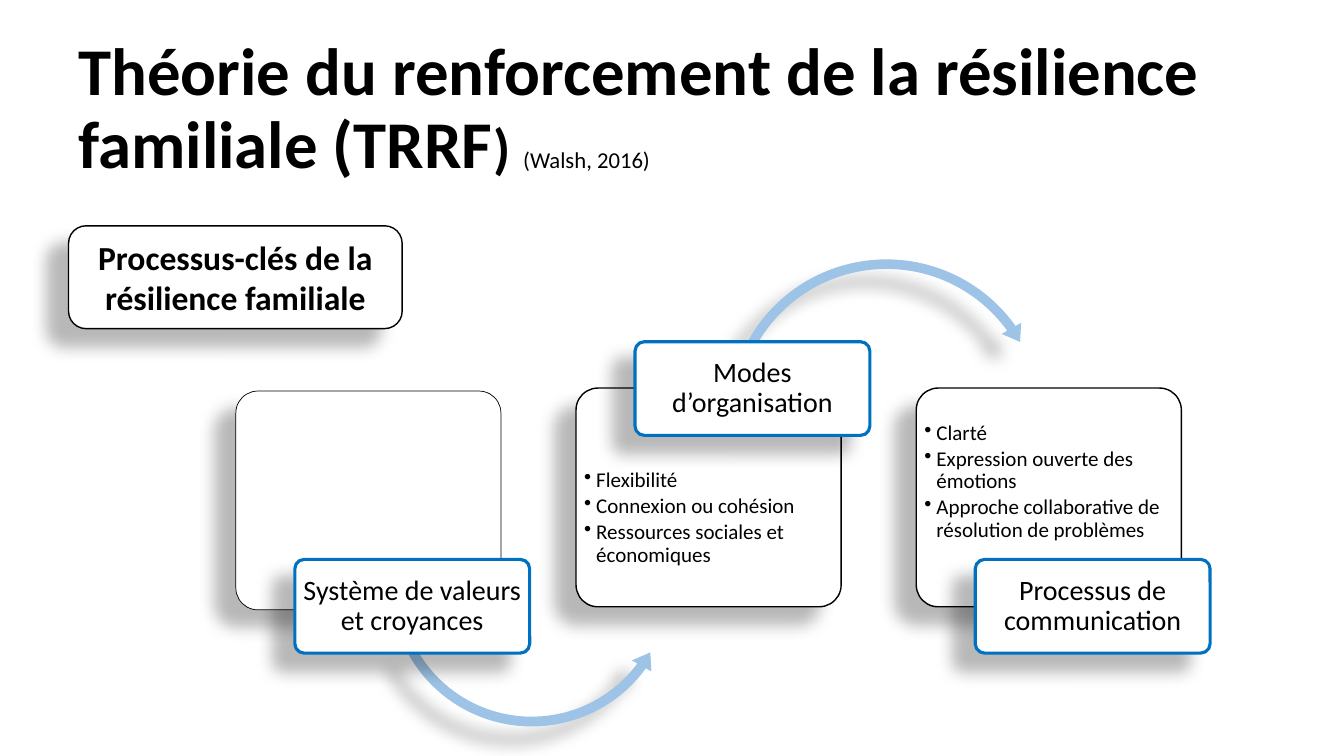
from lxml.etree import SubElement as Sub
from pptx import Presentation
from pptx.dml.color import RGBColor as Rgb
from pptx.enum.shapes import MSO_SHAPE as Form
from pptx.enum.text import MSO_ANCHOR as Anchor, PP_ALIGN as Align
from pptx.oxml.ns import qn
from pptx.util import Inches, Pt

HUES = {"ink": "000000", "paper": "FFFFFF", "edge": "0070C0", "arc": "9DC3E6"}
CELL = Inches(0.1)
FIRST, PITCH = 23.4, 33.75


class Deck:
    def __init__(self, wide, high, font):
        self.file = Presentation()
        self.file.slide_width = round(wide * CELL)
        self.file.slide_height = round(high * CELL)
        self.slide = self.file.slides.add_slide(self.file.slide_layouts[6])
        self.font = font

    def span(self, *cells):
        return [round(n * CELL) for n in cells]

    def hue(self, name):
        return Rgb.from_string(HUES[name])

    def shade(self, shape):
        shape.shadow.inherit = False
        glow = Sub(shape._element.spPr.find(qn("a:effectLst")), qn("a:outerShdw"),
                   blurRad="149860", dist="250190", dir="8460000", algn="ctr", rotWithShape="0")
        tint = Sub(glow, qn("a:srgbClr"), val=HUES["ink"])
        Sub(tint, qn("a:alpha"), val="28000")

    def form(self, kind, place, turns, fill):
        shape = self.slide.shapes.add_shape(kind, *self.span(*place))
        for i, turn in enumerate(turns):
            shape.adjustments[i] = turn
        shape.fill.solid()
        shape.fill.fore_color.rgb = self.hue(fill)
        self.shade(shape)
        return shape

    def box(self, place, line, width, curve=0.1):
        shape = self.form(Form.ROUNDED_RECTANGLE, place, [curve], "paper")
        shape.line.color.rgb = self.hue(line)
        shape.line.width = Pt(width)
        return shape

    def arc(self, kind, place, turns):
        self.form(kind, place, turns, "arc").line.fill.background()

    def frame(self, shape, anchor=Anchor.MIDDLE, pad=None):
        frame = shape.text_frame
        frame.word_wrap = True
        frame.vertical_anchor = anchor
        if pad is not None:
            frame.margin_left = frame.margin_right = round(pad * CELL)
            frame.margin_top = frame.margin_bottom = round(0.3 * CELL)
        return frame

    def words(self, par, runs, align=Align.LEFT, space=0.9):
        par.alignment = align
        par.line_spacing = space
        for text, size, bold in runs:
            run = par.add_run()
            run.text = text
            run.font.name = self.font
            run.font.size = Pt(size)
            run.font.bold = bold
            run.font.color.rgb = self.hue("ink")

    def title(self, place, runs):
        shape = self.slide.shapes.add_textbox(*self.span(*place))
        self.words(self.frame(shape).paragraphs[0], runs)

    def label(self, place, text):
        shape = self.box(place, "edge", 2.25)
        par = self.frame(shape, pad=0.5).paragraphs[0]
        self.words(par, [(text, 20, False)], Align.CENTER)

    def key(self, place, text):
        shape = self.box(place, "ink", 1, 0.17)
        par = self.frame(shape).paragraphs[0]
        self.words(par, [(text, 24, True)], Align.CENTER, 1)

    def points(self, place, items):
        shape = self.slide.shapes.add_textbox(*self.span(*place))
        frame = self.frame(shape, Anchor.TOP, 0.3)
        for i, item in enumerate(items):
            par = frame.add_paragraph() if i else frame.paragraphs[0]
            self.words(par, [(item, 15, False)])
            par.space_after = Pt(2.25)
            props = par._p.get_or_add_pPr()
            props.set("marL", str(Inches(0.12)))
            props.set("indent", str(-Inches(0.12)))
            Sub(props, qn("a:buChar"), char="•")


def main():
    deck = Deck(133.33, 75, "Calibri")
    deck.title((6.8, 4.7, 119.8, 12.5), [
        ("Théorie du renforcement de la résilience familiale (TRRF", 47.7, True),
        (") ", 39.6, True),
        ("(Walsh, 2016)", 16.2, False),
    ])
    low = (Form.LEFT_CIRCULAR_ARROW, (38.1, 43.4, 29.3, 29.3),
           (0.033, 4.036, 21.791, 90.245, 0.038))
    high = (Form.CIRCULAR_ARROW, (71.6, 25.1, 32.7, 32.7),
            (0.029, 3.593, 194.652, 125.755, 0.034))
    cards = [
        ("Système de valeurs et croyances", 38.8, 0.5, 55.5, low, 0, []),
        ("Modes d’organisation", 38.5, 1, 33.9, high, 46.3,
         ["Flexibilité", "Connexion ou cohésion", "Ressources sociales et économiques"]),
        ("Processus de communication", 38.5, 1, 55.5, None, 41.6,
         ["Clarté", "Expression ouverte des émotions",
          "Approche collaborative de résolution de problèmes"]),
    ]
    for i, (name, top, line, row, arc, start, items) in enumerate(cards):
        left = FIRST + i * PITCH
        deck.box((left, top, 26.3, 21.7), "ink", line)
        if items:
            deck.points((left + 0.5, start, 25.3, 13.4), items)
        if arc:
            deck.arc(*arc)
        deck.label((left + 5.85, row, 23.3, 9.3), name)
    deck.key((6.8, 22.4, 33.1, 10.2), "Processus-clés de la résilience familiale")
    deck.file.save("out.pptx")


if __name__ == "__main__":
    main()
